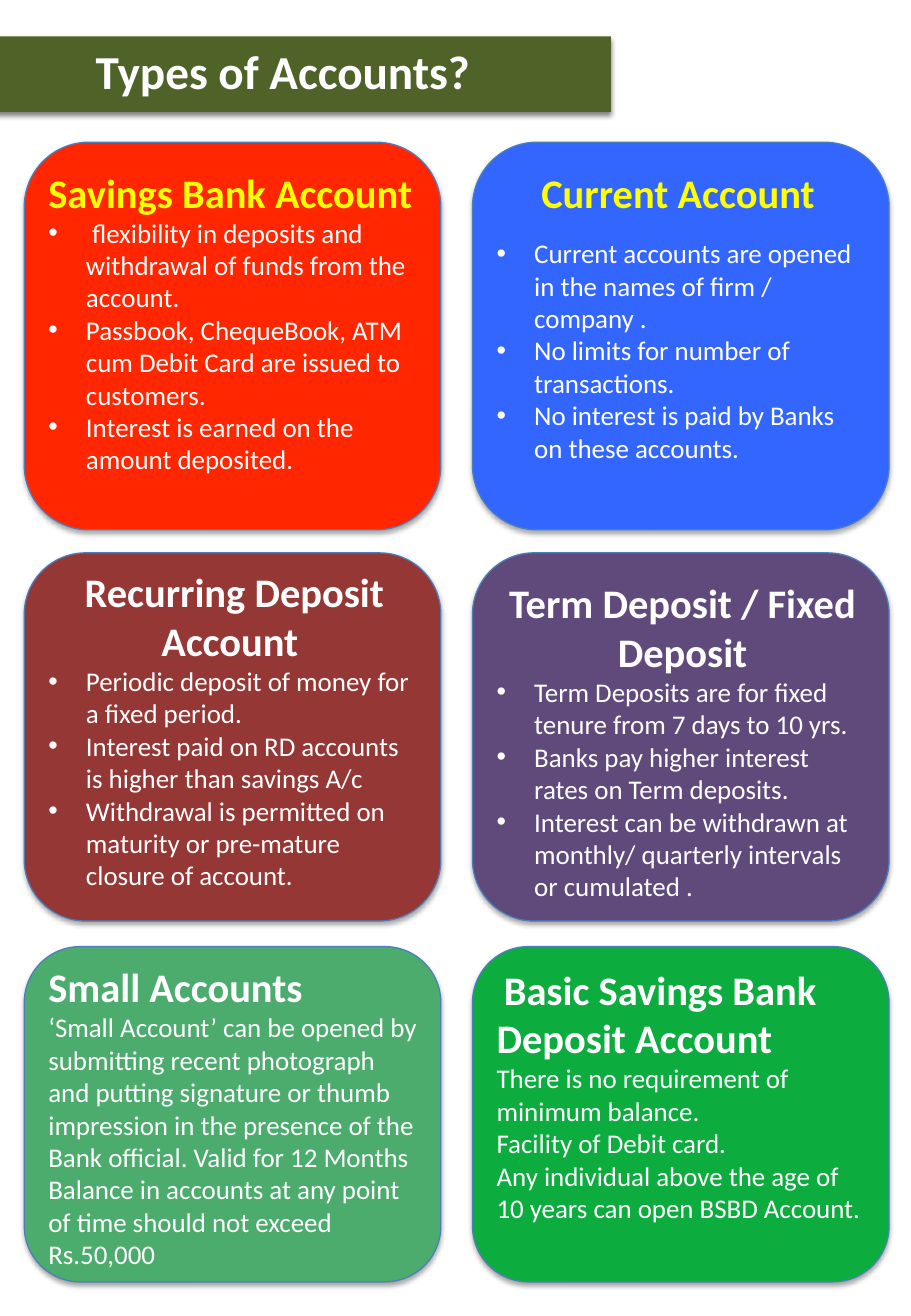
from dataclasses import dataclass

from lxml import etree
from pptx import Presentation
from pptx.dml.color import RGBColor
from pptx.enum.shapes import MSO_SHAPE
from pptx.enum.text import MSO_AUTO_SIZE, PP_ALIGN
from pptx.oxml.ns import qn
from pptx.util import Inches, Pt

RECTANGLE = MSO_SHAPE.RECTANGLE
ROUNDED = MSO_SHAPE.ROUNDED_RECTANGLE
LEFT = PP_ALIGN.LEFT
CENTER = PP_ALIGN.CENTER
FIT_SHAPE = MSO_AUTO_SIZE.SHAPE_TO_FIT_TEXT

FONT = "Calibri"
COLORS = {
    "olive": "4F6228",
    "red": "FF2600",
    "blue": "3366FF",
    "maroon": "953735",
    "purple": "604A7B",
    "sage": "4BAC6D",
    "green": "0DAC3F",
    "outline": "4B7EBC",
    "yellow": "FFFF00",
    "white": "FFFFFF",
    "shadow": "000000",
}
COLUMN_LEFTS = (0.2, 3.89)
ROWS = ((1.17, 3.19), (4.55, 3.03), (7.79, 2.76))
CARD_WIDTH = 3.43
TEXT_INSET = 0.1
TEXT_WIDTH = 3.26
BULLET_INDENT = 0.31


@dataclass
class Card:
    title: str
    fill: str
    lines: tuple[str, ...]
    text_top: float
    text_height: float
    title_color: str = "white"
    alignment: PP_ALIGN = LEFT
    bulleted: bool = True
    title_gap: float = 0
    title_indent: float = 0


CARDS = (
    Card("Savings Bank Account ", "red", (
        " flexibility in deposits and withdrawal of funds from the account.",
        "Passbook, ChequeBook, ATM cum Debit Card are issued to customers.",
        "Interest is earned on the amount deposited.",
    ), 1.33, 3.06, title_color="yellow"),
    Card("Current Account ", "blue", (
        "Current accounts are opened in the names of firm / company .",
        "No limits for number of transactions.",
        "No interest is paid by Banks on these accounts.",
    ), 1.33, 2.56, title_color="yellow", alignment=CENTER, title_gap=12.2),
    Card("Recurring Deposit Account ", "maroon", (
        "Periodic deposit of money for a fixed period.",
        "Interest paid on RD accounts is higher than savings A/c",
        "Withdrawal is permitted on maturity or pre-mature closure of account.",
    ), 4.62, 2.79, alignment=CENTER),
    Card("Term Deposit / Fixed Deposit", "purple", (
        "Term Deposits are for fixed tenure from 7 days to 10 yrs.",
        "Banks pay higher interest rates on Term deposits.",
        "Interest can be withdrawn at monthly/ quarterly intervals or cumulated .",
    ), 4.71, 2.79, alignment=CENTER),
    Card("Small Accounts", "sage", (
        "‘Small Account’ can be opened by submitting recent photograph and "
        "putting signature or thumb impression in the presence of the Bank "
        "official. Valid for 12 Months",
        "Balance in accounts at any point of time should not exceed Rs.50,000",
    ), 7.87, 2.66, bulleted=False),
    Card("Basic Savings Bank Deposit Account", "green", (
        "There is no requirement of minimum balance.",
        "Facility of Debit card.",
        "Any individual above the age of 10 years can open BSBD Account.",
    ), 7.89, 2.26, bulleted=False, title_indent=0.06),
)


def color(name: str) -> RGBColor:
    return RGBColor.from_string(COLORS[name])


def add_shadow(shape, opacity: int, blur: float, distance: float) -> None:
    shape.shadow.inherit = False
    effects = shape._element.spPr.find(qn("a:effectLst"))
    shadow = etree.SubElement(
        effects, qn("a:outerShdw"), blurRad=str(Pt(blur)), dist=str(Pt(distance)),
        dir="5400000", rotWithShape="0")
    shade = etree.SubElement(shadow, qn("a:srgbClr"), val=COLORS["shadow"])
    etree.SubElement(shade, qn("a:alpha"), val=str(opacity * 1000))


def add_panel(slide, kind: MSO_SHAPE, left: float, top: float,
              width: float, height: float, fill: str):
    shape = slide.shapes.add_shape(
        kind, Inches(left), Inches(top), Inches(width), Inches(height))
    shape.fill.solid()
    shape.fill.fore_color.rgb = color(fill)
    return shape


def add_text_frame(slide, left: float, top: float, width: float, height: float,
                   wrap: bool):
    box = slide.shapes.add_textbox(
        Inches(left), Inches(top), Inches(width), Inches(height))
    box.text_frame.word_wrap = wrap
    box.text_frame.auto_size = FIT_SHAPE
    return box.text_frame


def write(paragraph, text: str, size: float, color_name: str, bold: bool) -> None:
    paragraph.text = text
    paragraph.font.name = FONT
    paragraph.font.size = Pt(size)
    paragraph.font.bold = bold
    paragraph.font.color.rgb = color(color_name)


def add_bullet(paragraph) -> None:
    properties = paragraph._p.get_or_add_pPr()
    properties.set("marL", str(Inches(BULLET_INDENT)))
    properties.set("indent", str(-Inches(BULLET_INDENT)))
    etree.SubElement(properties, qn("a:buFont"), typeface="Arial")
    etree.SubElement(properties, qn("a:buChar"), char="•")


def add_banner(slide) -> None:
    banner = add_panel(slide, RECTANGLE, -0.07, 0.3, 5.1, 0.62, "olive")
    banner.line.fill.background()
    add_shadow(banner, 50, 3, 2)
    frame = add_text_frame(slide, 0.69, 0.3, 3.33, 0.57, False)
    write(frame.paragraphs[0], "Types of Accounts?", 28, "white", True)


def add_card(slide, card: Card, left: float, top: float, height: float) -> None:
    panel = add_panel(slide, ROUNDED, left, top, CARD_WIDTH, height, card.fill)
    panel.line.color.rgb = color("outline")
    panel.line.width = Pt(0.75)
    add_shadow(panel, 35, 3.1, 1.8)

    frame = add_text_frame(slide, left + TEXT_INSET, card.text_top,
                           TEXT_WIDTH, card.text_height, True)
    title = frame.paragraphs[0]
    title.alignment = card.alignment
    title.space_after = Pt(card.title_gap)
    if card.title_indent:
        title._p.get_or_add_pPr().set("indent", str(Inches(card.title_indent)))
    write(title, card.title, 24, card.title_color, True)
    for line in card.lines:
        paragraph = frame.add_paragraph()
        if card.bulleted:
            add_bullet(paragraph)
        write(paragraph, line, 16, "white", False)


def main() -> None:
    presentation = Presentation()
    presentation.slide_width = Inches(7.5)
    presentation.slide_height = Inches(10.83)
    slide = presentation.slides.add_slide(presentation.slide_layouts[6])
    add_banner(slide)
    for index, card in enumerate(CARDS):
        row, column = divmod(index, len(COLUMN_LEFTS))
        top, height = ROWS[row]
        add_card(slide, card, COLUMN_LEFTS[column], top, height)
    presentation.save("out.pptx")


if __name__ == "__main__":
    main()
